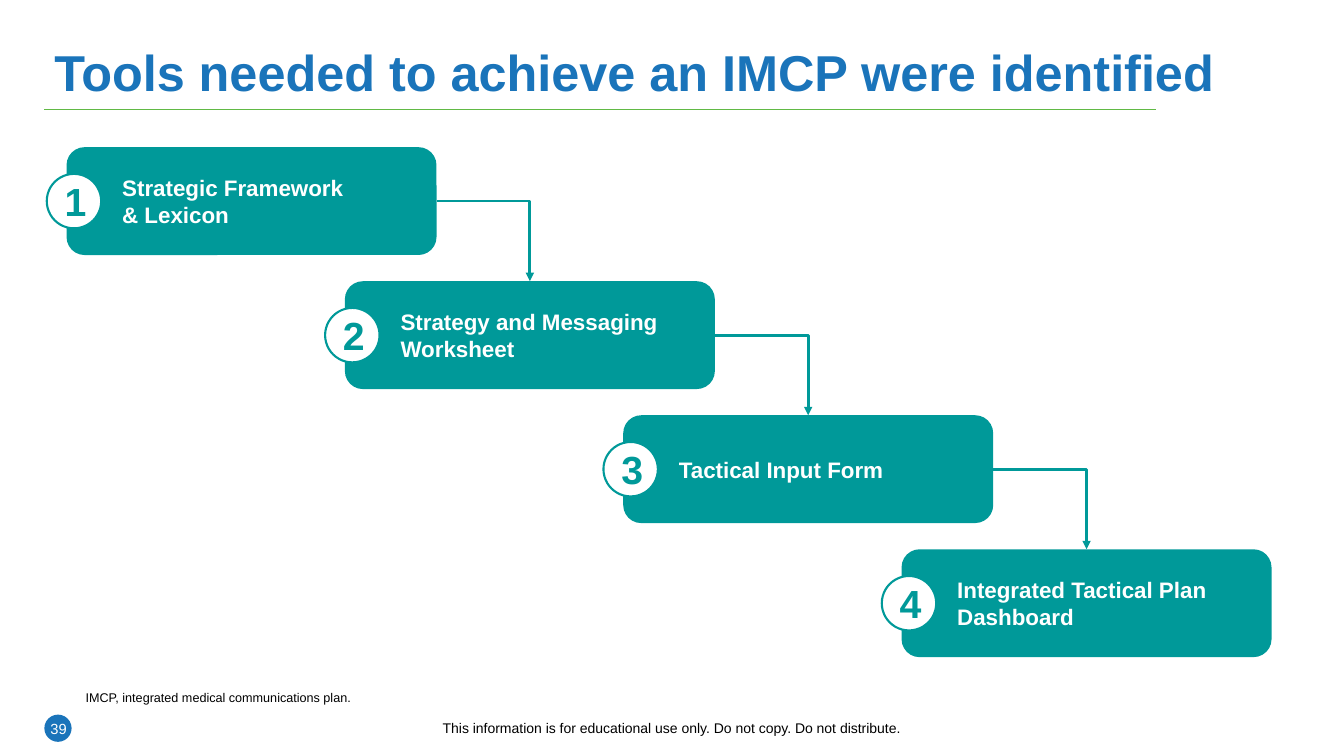
from dataclasses import dataclass

from lxml.etree import SubElement
from pptx import Presentation
from pptx.dml.color import RGBColor
from pptx.enum.shapes import MSO_CONNECTOR, MSO_SHAPE
from pptx.enum.text import MSO_ANCHOR, PP_ALIGN
from pptx.oxml.ns import qn
from pptx.util import Inches, Pt

COLORS = {"blue": "1A74BA", "teal": "009999", "green": "61B945",
          "white": "FFFFFF", "black": "000000"}
SLIDE_WIDTH, SLIDE_HEIGHT = Inches(13.33), Inches(7.5)
FONT = "Arial"
TOP_SITE, RIGHT_SITE = 0, 3


@dataclass(frozen=True)
class Area:
    """A rectangle in percent of the slide's width and height."""
    left: float
    top: float
    width: float
    height: float

    def lengths(self) -> tuple:
        """Return left, top, width and height in slide units."""
        return (across(self.left), down(self.top),
                across(self.width), down(self.height))


@dataclass(frozen=True)
class Tool:
    """One numbered step of the staircase."""
    number: int
    label: str


TOOLS = [
    Tool(1, "Strategic Framework\v& Lexicon"),
    Tool(2, "Strategy and Messaging Worksheet"),
    Tool(3, "Tactical Input Form"),
    Tool(4, "Integrated Tactical Plan Dashboard"),
]
FIRST_CARD = Area(4.95, 19.47, 27.53, 14.27)
STEP_ACROSS, STEP_DOWN = 20.71, 17.73
BADGE_WIDTH, BADGE_HEIGHT, BADGE_OVERHANG = 4.05, 7.2, 1.47


def across(share: float) -> int:
    """Turn a percentage of the slide's width into a length."""
    return int(SLIDE_WIDTH * share / 100)


def down(share: float) -> int:
    """Turn a percentage of the slide's height into a length."""
    return int(SLIDE_HEIGHT * share / 100)


def color(name: str) -> RGBColor:
    """Look up a named colour."""
    return RGBColor.from_string(COLORS[name])


def write(shape, text: str, *, size: float, ink: str, bold: bool = False,
          align=PP_ALIGN.LEFT, anchor=MSO_ANCHOR.MIDDLE, spacing=None) -> None:
    """Put formatted text into a shape."""
    frame = shape.text_frame
    frame.word_wrap = True
    frame.vertical_anchor = anchor
    para = frame.paragraphs[0]
    para.text = text
    para.alignment = align
    para.line_spacing = spacing
    for span in para.runs:
        span.font.name = FONT
        span.font.size = Pt(size)
        span.font.bold = bold
        span.font.color.rgb = color(ink)


def add_label(page, area: Area, text: str, **style) -> None:
    """Add a text box with formatted text."""
    write(page.shapes.add_textbox(*area.lengths()), text, **style)


def add_figure(page, kind, area: Area, fill: str, outline: str = ""):
    """Add a filled preset shape, with an outline if one is named."""
    figure = page.shapes.add_shape(kind, *area.lengths())
    figure.shadow.inherit = False
    figure.fill.solid()
    figure.fill.fore_color.rgb = color(fill)
    if outline:
        figure.line.color.rgb = color(outline)
        figure.line.width = Pt(1.5)
    else:
        figure.line.fill.background()
    return figure


def add_line(page, kind, ends: tuple, ink: str, width: float):
    """Add a shadowless connector between two points."""
    line = page.shapes.add_connector(kind, *ends)
    line.line.color.rgb = color(ink)
    line.line.width = Pt(width)
    SubElement(line._element.spPr, qn("a:effectLst"))
    return line


def add_tool(page, tool: Tool):
    """Add a card with its number badge and return the card."""
    index = tool.number - 1
    area = Area(FIRST_CARD.left + index * STEP_ACROSS,
                FIRST_CARD.top + index * STEP_DOWN,
                FIRST_CARD.width, FIRST_CARD.height)
    card = add_figure(page, MSO_SHAPE.ROUNDED_RECTANGLE, area, "teal")
    card.text_frame.margin_left = Inches(0.5)
    write(card, tool.label, size=16, ink="white", bold=True)
    badge_area = Area(area.left - BADGE_OVERHANG,
                      area.top + (area.height - BADGE_HEIGHT) / 2,
                      BADGE_WIDTH, BADGE_HEIGHT)
    badge = add_figure(page, MSO_SHAPE.OVAL, badge_area, "white", "teal")
    write(badge, str(tool.number), size=28, ink="teal", bold=True,
          align=PP_ALIGN.CENTER)
    return card


def add_arrow(page, source, target) -> None:
    """Link the right side of one card to the top of the next."""
    arrow = add_line(page, MSO_CONNECTOR.ELBOW, (0, 0, 0, 0), "teal", 2)
    arrow.begin_connect(source, RIGHT_SITE)
    arrow.end_connect(target, TOP_SITE)
    properties = arrow._element.spPr
    properties.find(qn("a:prstGeom")).set("prst", "bentConnector2")
    SubElement(properties.find(qn("a:ln")), qn("a:tailEnd"), type="triangle")


def main() -> None:
    """Build the slide and save the deck."""
    deck = Presentation()
    deck.slide_width, deck.slide_height = SLIDE_WIDTH, SLIDE_HEIGHT
    page = deck.slides.add_slide(deck.slide_layouts[6])

    add_figure(page, MSO_SHAPE.OVAL, Area(3.3, 94.53, 2.03, 3.6), "blue")
    add_line(page, MSO_CONNECTOR.STRAIGHT,
             (across(3.3), down(14.53), across(86.05), down(14.53)),
             "green", 0.5)
    add_label(page, Area(3.3, 2.8, 91.3, 14.27),
              "Tools needed to achieve an IMCP were identified",
              size=36, ink="blue", bold=True, spacing=0.9)
    add_label(page, Area(2.18, 94.53, 4.35, 5.33), "39", size=10.5,
              ink="white", align=PP_ALIGN.CENTER, anchor=MSO_ANCHOR.TOP)
    add_label(page, Area(2.85, 94.53, 94.22, 5.33),
              "This information is for educational use only. "
              "Do not copy. Do not distribute.", size=10,
              ink="black", align=PP_ALIGN.CENTER, anchor=MSO_ANCHOR.TOP)

    cards = [add_tool(page, tool) for tool in TOOLS]
    for source, target in zip(cards, cards[1:]):
        add_arrow(page, source, target)

    add_label(page, Area(5.63, 90.53, 84.4, 3.33),
              "IMCP, integrated medical communications plan.",
              size=9, ink="black", anchor=MSO_ANCHOR.BOTTOM)
    deck.save("out.pptx")


if __name__ == "__main__":
    main()
